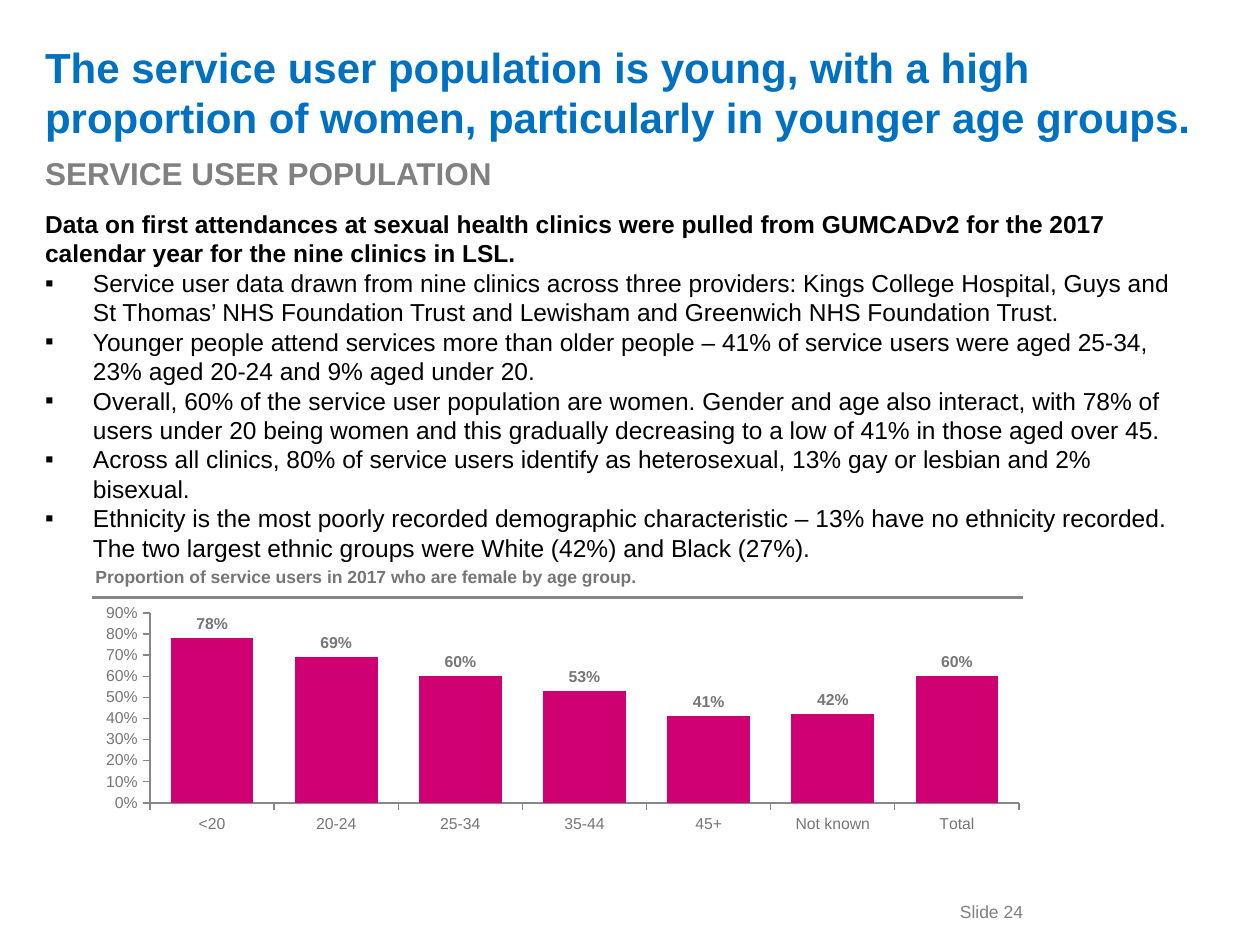
from lxml import etree
from pptx import Presentation
from pptx import util as u
from pptx.chart.data import CategoryChartData
from pptx.dml.color import RGBColor
from pptx.enum import chart as ch, shapes, text
from pptx.oxml.ns import qn

PX = 9144
GREY, DIM, AXIS, BLACK = "808080", "767676", "878787", "000000"
BLUE, PINK = "0070C0", "CF0072"
TITLE = ("The service user population is young, with a high proportion of women, "
         "particularly in younger age groups.")
LEAD = ("Data on first attendances at sexual health clinics were pulled from GUMCADv2 "
        "for the 2017 calendar year for the nine clinics in LSL.")
POINTS = [
    "Service user data drawn from nine clinics across three providers: Kings College Hospital, "
    "Guys and St Thomas’ NHS Foundation Trust and Lewisham and Greenwich NHS Foundation Trust.",
    "Younger people attend services more than older people – 41% of service users were aged "
    "25-34, 23% aged 20-24 and 9% aged under 20.",
    "Overall, 60% of the service user population are women. Gender and age also interact, with "
    "78% of users under 20 being women and this gradually decreasing to a low of 41% in those "
    "aged over 45.",
    "Across all clinics, 80% of service users identify as heterosexual, 13% gay or lesbian and "
    "2% bisexual.",
    "Ethnicity is the most poorly recorded demographic characteristic – 13% have no ethnicity "
    "recorded. The two largest ethnic groups were White (42%) and Black (27%).",
]
SHARES = {"<20": 0.78, "20-24": 0.69, "25-34": 0.60, "35-44": 0.53,
          "45+": 0.41, "Not known": 0.42, "Total": 0.60}
BOXES = [
    ((26, 21, 933, 104), [TITLE], 24, BLUE, True, text.MSO_ANCHOR.MIDDLE),
    ((26, 117, 700, 40), ["SERVICE USER POPULATION"], 18, GREY, True, text.MSO_ANCHOR.TOP),
    ((26, 161, 933, 248), [LEAD] + POINTS, 14, BLACK, True, text.MSO_ANCHOR.TOP),
    ((66, 444, 797, 27), ["Proportion of service users in 2017 who are female by age group."],
     10, DIM, True, text.MSO_ANCHOR.TOP),
    ((752, 710, 72, 27), ["Slide 24"], 10, GREY, False, text.MSO_ANCHOR.TOP),
]
PLOT = {"x": 0.07, "y": 0.06, "w": 0.91, "h": 0.79}


def px(*vals):
    """Turn px lengths into EMU."""
    return [u.Emu(v * PX) for v in vals]


def hue(code):
    """Turn a hex string into a colour."""
    return RGBColor.from_string(code)


def style(font, size, code, bold=False):
    """Set the look of a font."""
    font.name, font.size, font.bold = "Arial", u.Pt(size), bold
    font.color.rgb = hue(code)


def bullet(para):
    """Give a paragraph a square bullet and a hanging indent."""
    props = para._p.get_or_add_pPr()
    props.set("marL", str(38 * PX))
    props.set("indent", str(-38 * PX))
    etree.SubElement(props, qn("a:buFont")).set("typeface", "Arial")
    etree.SubElement(props, qn("a:buChar")).set("char", "▪")


def write(slide, place, lines, size, code, bold, anchor):
    """Add a text box; lines after the first are plain bullets."""
    frame = slide.shapes.add_textbox(*px(*place)).text_frame
    frame.word_wrap, frame.vertical_anchor = True, anchor
    for i, line in enumerate(lines):
        para = frame.paragraphs[0] if i == 0 else frame.add_paragraph()
        para.text = line
        if i:
            bullet(para)
        style(para.font, size, code, bold and i == 0)


def plot(slide):
    """Add the column chart."""
    data = CategoryChartData(number_format="0%")
    data.categories = list(SHARES)
    data.add_series("Female", list(SHARES.values()))
    chart = slide.shapes.add_chart(
        ch.XL_CHART_TYPE.COLUMN_CLUSTERED, *px(66, 475, 758, 191), data).chart
    chart.has_legend = chart.has_title = False
    style(chart.font, 10, DIM)
    for axis in (chart.category_axis, chart.value_axis):
        axis.has_major_gridlines = False
        axis.major_tick_mark = ch.XL_TICK_MARK.OUTSIDE
        axis.minor_tick_mark = ch.XL_TICK_MARK.NONE
        axis.format.line.color.rgb = hue(AXIS)
        style(axis.tick_labels.font, 9, DIM)
    axis.minimum_scale, axis.maximum_scale, axis.major_unit = 0, 0.9, 0.1
    axis.tick_labels.number_format = "0%"
    axis.tick_labels.number_format_is_linked = False
    bars = chart.plots[0]
    bars.gap_width, bars.vary_by_categories = 50, False
    fill = bars.series[0].format.fill
    fill.solid()
    fill.fore_color.rgb = hue(PINK)
    bars.has_data_labels = True
    labels = bars.data_labels
    labels.show_value, labels.position = True, ch.XL_LABEL_POSITION.OUTSIDE_END
    labels.number_format, labels.number_format_is_linked = "0%", False
    style(labels.font, 9, DIM, True)
    area = chart._chartSpace.chart.plotArea
    for old in area.findall(qn("c:layout")):
        area.remove(old)
    layout = etree.Element(qn("c:layout"))
    area.insert(0, layout)
    manual = etree.SubElement(layout, qn("c:manualLayout"))
    parts = {"layoutTarget": "inner", "xMode": "edge", "yMode": "edge", **PLOT}
    for name, val in parts.items():
        etree.SubElement(manual, qn("c:" + name)).set("val", str(val))


def rule(slide):
    """Draw the line above the chart."""
    line = slide.shapes.add_connector(shapes.MSO_CONNECTOR.STRAIGHT, *px(73, 474, 812, 474))
    line.line.color.rgb, line.line.width = hue(AXIS), u.Pt(1.5)
    etree.SubElement(line._element.spPr, qn("a:effectLst"))


def main():
    """Build the slide."""
    deck = Presentation()
    deck.slide_width, deck.slide_height = px(1000, 750)
    slide = deck.slides.add_slide(deck.slide_layouts[6])
    plot(slide)
    rule(slide)
    for box in BOXES:
        write(slide, *box)
    deck.save("out.pptx")


if __name__ == "__main__":
    main()
